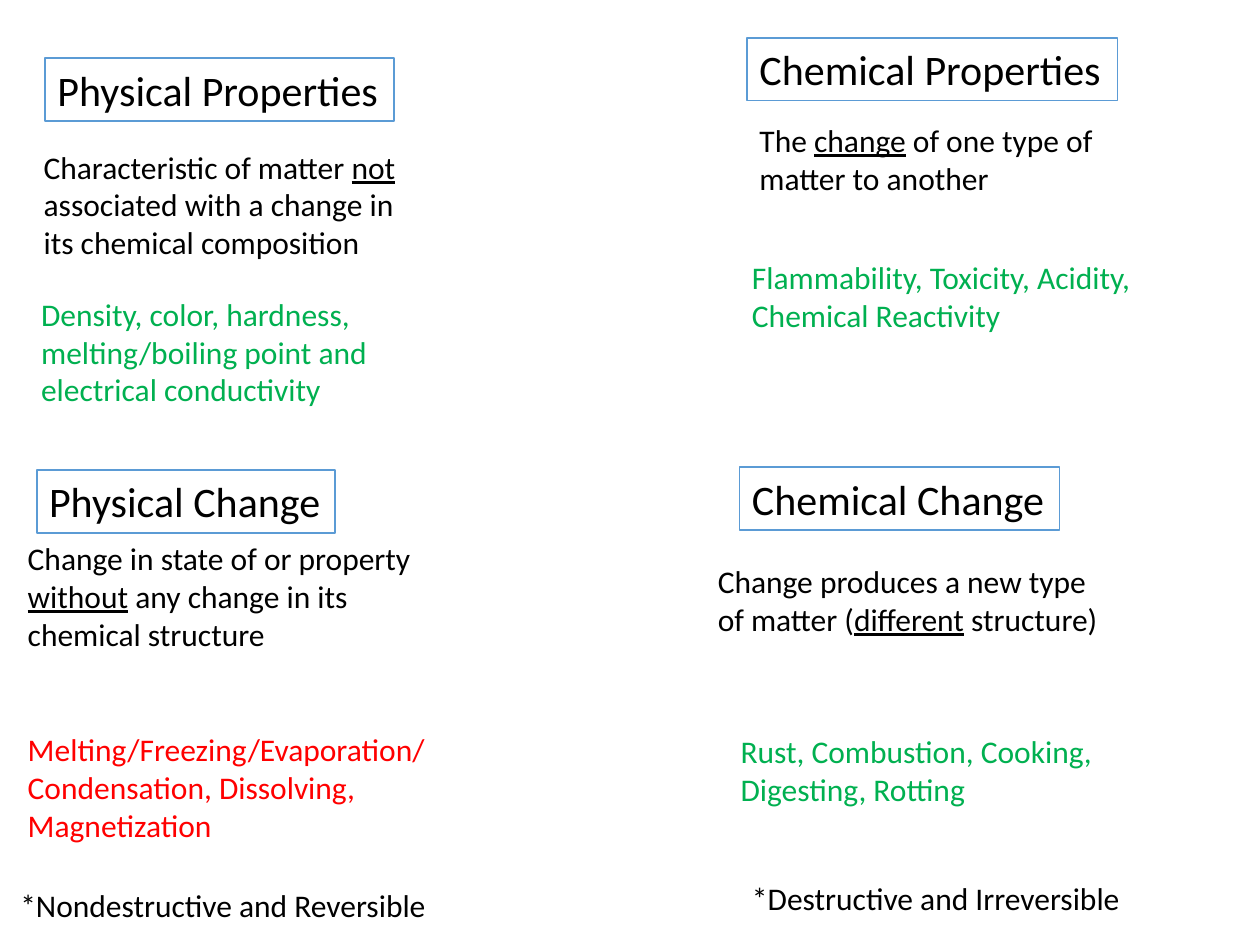
import pptx
import pptx.util
import pptx.dml.color
import pptx.enum.shapes
import pptx.enum.text

Cm = pptx.util.Cm
Pt = pptx.util.Pt

COLOURS = {
    "text": "000000",
    "example": "00B050",
    "alert": "FF0000",
    "border": "5B9BD5",
    "paper": "FFFFFF",
}
LINE_HEIGHTS = {1: 1.02, 2: 1.8, 3: 2.57}
HEADING_HEIGHT = 1.27


def colour(name):
    return pptx.dml.color.RGBColor.from_string(COLOURS[name])


def write(shape, text, size=18, ink="text", wrap=True, underlined=None):
    frame = shape.text_frame
    frame.word_wrap = wrap
    frame.auto_size = pptx.enum.text.MSO_AUTO_SIZE.SHAPE_TO_FIT_TEXT
    frame.vertical_anchor = pptx.enum.text.MSO_ANCHOR.TOP
    para = frame.paragraphs[0]
    para.alignment = pptx.enum.text.PP_ALIGN.LEFT
    before, mark, after = text.partition(underlined) if underlined else (text, "", "")
    for part in filter(None, (before, mark, after)):
        span = para.add_run()
        span.text = part
        span.font.name = "Calibri"
        span.font.size = Pt(size)
        span.font.color.rgb = colour(ink)
        if part == mark:
            span.font.underline = True


def add_heading(page, box, text):
    left, top, width = box
    shape = page.shapes.add_shape(
        pptx.enum.shapes.MSO_SHAPE.RECTANGLE,
        Cm(left), Cm(top), Cm(width), Cm(HEADING_HEIGHT))
    shape.shadow.inherit = False
    shape.fill.solid()
    shape.fill.fore_color.rgb = colour("paper")
    shape.line.color.rgb = colour("border")
    shape.line.width = Pt(1)
    write(shape, text, size=24, wrap=False)


def add_topic(page, box, heading, passages):
    left, top, width = box
    add_heading(page, box, heading)
    for (right, down, passage_width), lines, text, style in passages:
        shape = page.shapes.add_textbox(
            Cm(left + right), Cm(top + down),
            Cm(passage_width), Cm(LINE_HEIGHTS[lines]))
        write(shape, text, **style)


TOPICS = [
    ((0.91, 1.17, 7.04), "Physical Properties", [
        ((-0.28, 1.68, 8.26), 3,
         "Characteristic of matter not associated with a change in its chemical composition",
         {"underlined": "not"}),
        ((-0.33, 4.65, 9.02), 3,
         "Density, color, hardness, melting/boiling point and electrical conductivity",
         {"ink": "example"}),
    ]),
    ((15.06, 0.76, 7.47), "Chemical Properties", [
        ((0, 1.55, 8.26), 2, "The change of one type of matter to another",
         {"underlined": "change"}),
        ((-0.15, 4.32, 9.02), 2, "Flammability, Toxicity, Acidity, Chemical Reactivity",
         {"ink": "example"}),
    ]),
    ((0.74, 9.47, 6.02), "Physical Change", [
        ((-0.43, 1.27, 8.26), 3,
         "Change in state of or property without any change in its chemical structure",
         {"underlined": "without"}),
        ((-0.43, 5.13, 9.65), 3,
         "Melting/Freezing/Evaporation/Condensation, Dissolving, Magnetization",
         {"ink": "alert"}),
        ((-0.58, 8.26, 8.74), 1, "*Nondestructive and Reversible", {"wrap": False}),
    ]),
    ((14.91, 9.42, 6.45), "Chemical Change", [
        ((-0.69, 1.78, 8.26), 2,
         "Change produces a new type of matter (different structure)",
         {"underlined": "different"}),
        ((-0.23, 5.21, 9.02), 2, "Rust, Combustion, Cooking, Digesting, Rotting",
         {"ink": "example"}),
        ((0, 8.18, 8.03), 1, "*Destructive and Irreversible", {"wrap": False}),
    ]),
]


def main():
    deck = pptx.Presentation()
    deck.slide_width = Cm(25.4)
    deck.slide_height = Cm(19.05)
    page = deck.slides.add_slide(deck.slide_layouts[6])
    for box, heading, passages in TOPICS:
        add_topic(page, box, heading, passages)
    deck.save("out.pptx")


if __name__ == "__main__":
    main()
